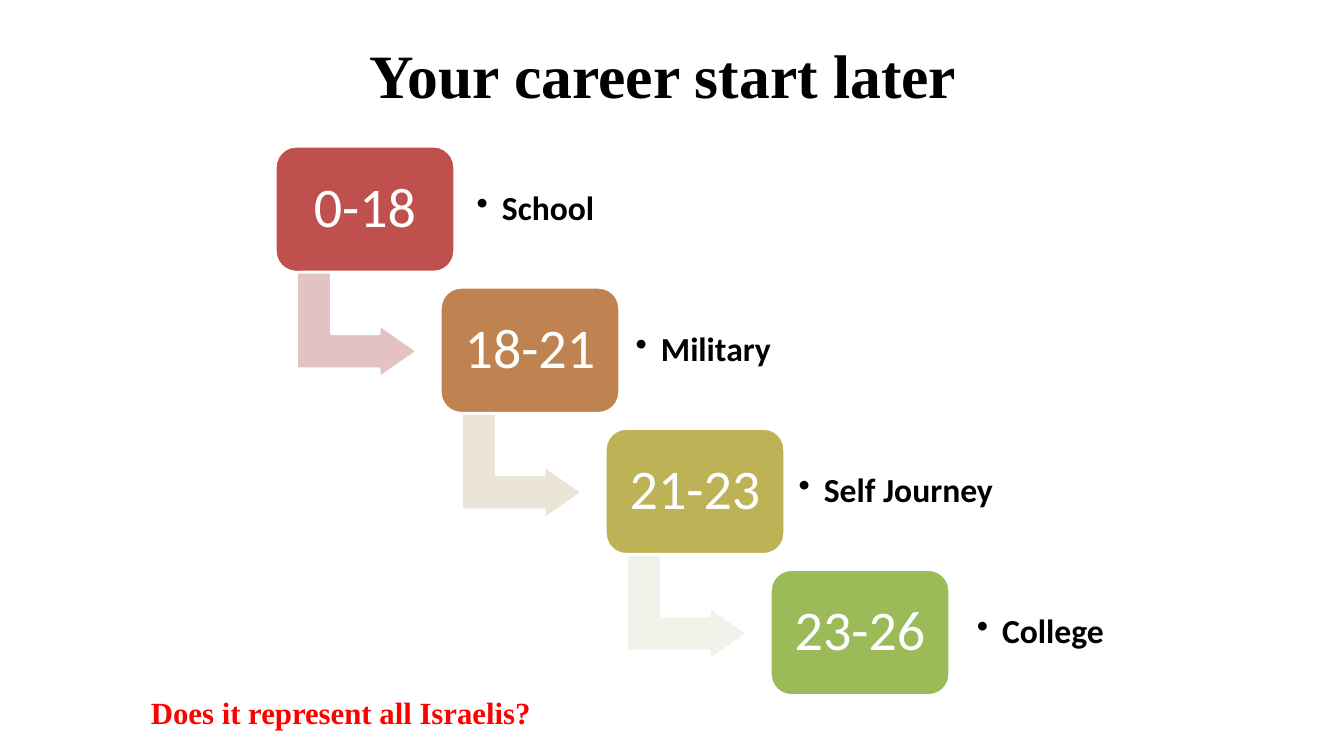
import pptx
import pptx.util
import pptx.dml.color
import pptx.enum.shapes
import pptx.enum.text
import lxml.etree
import pptx.oxml.ns

Inches = pptx.util.Inches
Pt = pptx.util.Pt
RGBColor = pptx.dml.color.RGBColor
SHAPES = pptx.enum.shapes.MSO_SHAPE
ALIGN = pptx.enum.text.PP_ALIGN
ANCHOR = pptx.enum.text.MSO_ANCHOR

BLACK = RGBColor(0x00, 0x00, 0x00)
WHITE = RGBColor(0xFF, 0xFF, 0xFF)
RED = RGBColor(0xFF, 0x00, 0x00)
SERIF = "Times New Roman"
SANS = "Calibri"

CARD_WIDTH, CARD_HEIGHT = 1.78, 1.25
STEP_RIGHT, STEP_DOWN = 4.91 / 3, 1.4

# Ages, stage, card colour, arrow colour, label offset from card, label width
STAGES = [
    ("0-18", "School", RGBColor(0xC0, 0x50, 0x4D), RGBColor(0xE2, 0xC2, 0xC2), 1.9, 1.96),
    ("18-21", "Military", RGBColor(0xBE, 0x83, 0x51), RGBColor(0xEA, 0xE5, 0xD6), 1.84, 1.83),
    ("21-23", "Self Journey", RGBColor(0xBD, 0xB2, 0x55), RGBColor(0xEF, 0xF3, 0xEA), 1.82, 2.23),
    ("23-26", "College", RGBColor(0x9B, 0xBB, 0x59), None, 1.95, 2.12),
]


def place(shape, left, top, width, height):
    shape.left, shape.top = Inches(left), Inches(top)
    shape.width, shape.height = Inches(width), Inches(height)


def add_span(para, text, font, size, color, bold=False):
    span = para.add_run()
    span.text = text
    span.font.name, span.font.size, span.font.bold = font, Pt(size), bold
    span.font.color.rgb = color


def set_frame(frame, inset):
    frame.word_wrap = True
    frame.vertical_anchor = ANCHOR.MIDDLE
    frame.margin_left = frame.margin_right = Inches(inset)
    frame.margin_top = frame.margin_bottom = Inches(inset)


def add_bullet(para, indent):
    properties = para._p.get_or_add_pPr()
    properties.set("marL", str(Inches(indent)))
    properties.set("indent", str(-Inches(indent)))
    bullet = lxml.etree.SubElement(properties, pptx.oxml.ns.qn("a:buChar"))
    bullet.set("char", "•")


def add_block(page, preset, left, top, width, height, color):
    block = page.shapes.add_shape(
        preset, Inches(left), Inches(top), Inches(width), Inches(height))
    block.shadow.inherit = False
    block.fill.solid()
    block.fill.fore_color.rgb = color
    block.line.color.rgb = WHITE
    block.line.width = Pt(2)
    return block


def add_title(page, left, top, width, height):
    title = page.shapes.title
    place(title, left, top, width, height)
    title.text_frame.vertical_anchor = ANCHOR.MIDDLE
    para = title.text_frame.paragraphs[0]
    para.alignment = ALIGN.CENTER
    add_span(para, "Your career start later", SERIF, 44, BLACK, True)


def add_stage(page, left, top, ages, stage, card_color, arrow_color, label_offset, label_width):
    # Arrow down to the next stage
    if arrow_color is not None:
        arrow = add_block(page, SHAPES.BENT_UP_ARROW, left + 0.28, top + 1.17,
                          1.06, 1.2, arrow_color)
        arrow.rotation = 90
        for index, value in enumerate((0.328, 0.25, 0.358)):
            arrow.adjustments[index] = value

    # Card with the ages
    card = add_block(page, SHAPES.ROUNDED_RECTANGLE, left, top,
                     CARD_WIDTH, CARD_HEIGHT, card_color)
    card.adjustments[0] = 0.167
    set_frame(card.text_frame, 0.17)
    para = card.text_frame.paragraphs[0]
    para.alignment = ALIGN.CENTER
    para.line_spacing = 0.9
    add_span(para, ages, SANS, 40, WHITE)

    # Bulleted label beside the card
    label = page.shapes.add_textbox(Inches(left + label_offset), Inches(top + 0.12),
                                    Inches(label_width), Inches(1.01))
    set_frame(label.text_frame, 0.1)
    para = label.text_frame.paragraphs[0]
    para.level = 1
    add_bullet(para, 0.25)
    para.line_spacing = 0.9
    add_span(para, stage, SANS, 24, BLACK, True)


def add_staircase(page, left, top):
    for index, stage in enumerate(STAGES):
        add_stage(page, left + index * STEP_RIGHT, top + index * STEP_DOWN, *stage)


def add_question(page, left, top, width, height):
    box = page.shapes.add_textbox(Inches(left), Inches(top), Inches(width), Inches(height))
    box.text_frame.word_wrap = True
    para = box.text_frame.paragraphs[0]
    para.alignment = ALIGN.CENTER
    add_span(para, "Does it represent all Israelis?", SERIF, 22, RED, True)


def main():
    deck = pptx.Presentation()
    deck.slide_width, deck.slide_height = Inches(13.33), Inches(7.5)
    page = deck.slides.add_slide(deck.slide_layouts.get_by_name("Title Only"))
    add_title(page, 2.08, 0.3, 9, 0.87)
    add_staircase(page, 2.73, 1.45)
    add_question(page, 1.17, 6.83, 4.42, 0.67)
    deck.save("out.pptx")


if __name__ == "__main__":
    main()
